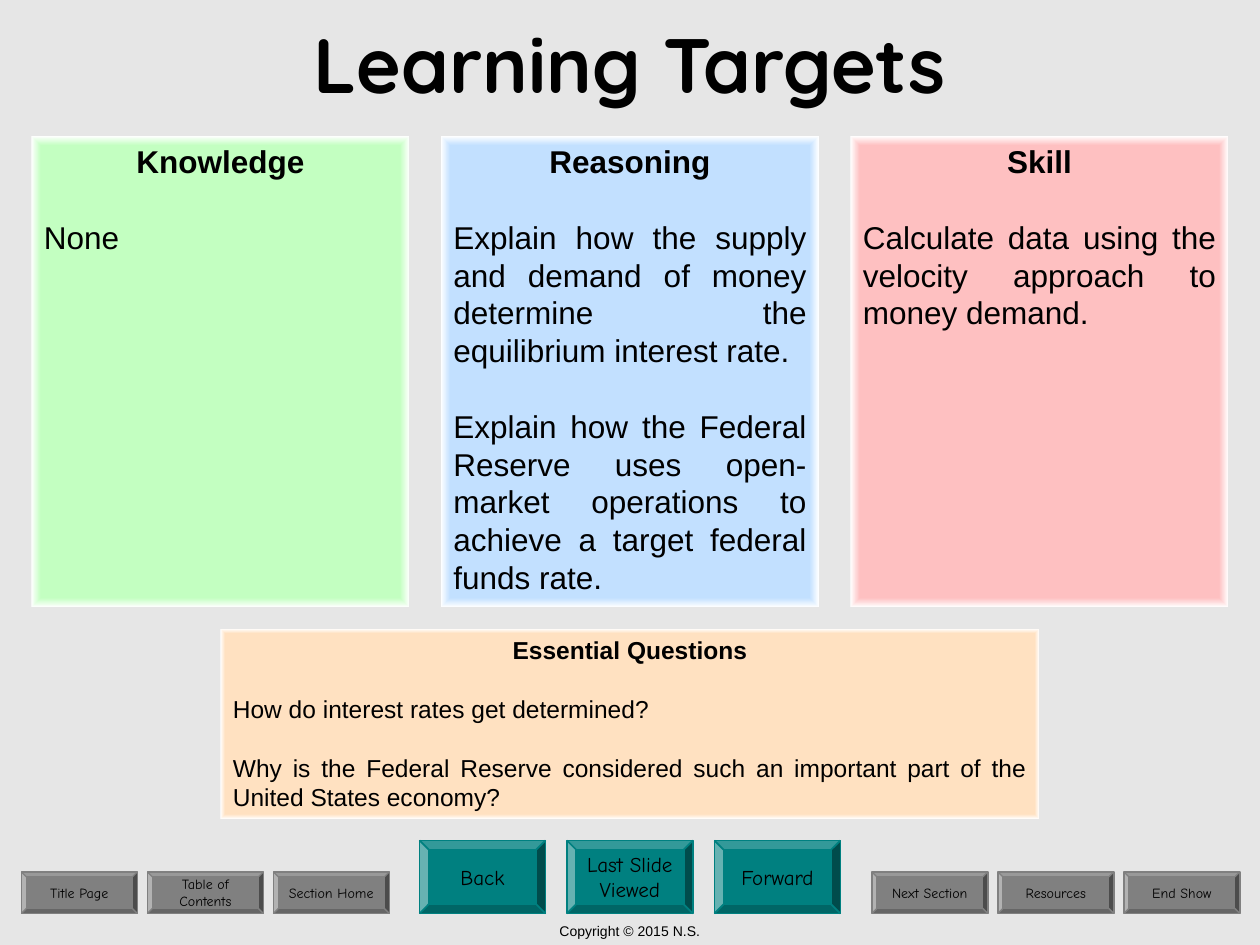
"""Build the Learning Targets slide with target cards and navigation buttons."""
from pptx import Presentation
from pptx.dml.color import RGBColor
from pptx.enum.shapes import MSO_SHAPE
from pptx.enum.text import MSO_ANCHOR, PP_ALIGN
from pptx.oxml import parse_xml
from pptx.oxml.ns import nsdecls, qn
from pptx.util import Inches, Pt

BLACK = RGBColor(0x00, 0x00, 0x00)
PAGE = RGBColor(0xE6, 0xE6, 0xE6)
TEAL = RGBColor(0x00, 0x80, 0x80)
GRAY = RGBColor(0x80, 0x80, 0x80)
GREEN = RGBColor(0xC3, 0xFF, 0xC1)
BLUE = RGBColor(0xC2, 0xE0, 0xFF)
PINK = RGBColor(0xFE, 0xC0, 0xC1)
PEACH = RGBColor(0xFF, 0xE1, 0xC1)
WHITE = RGBColor(0xFF, 0xFF, 0xFF)

TARGETS = [
    ("Knowledge", ["None"], GREEN),
    ("Reasoning", [
        "Explain how the supply and demand of money determine the equilibrium interest rate.",
        "Explain how the Federal Reserve uses open-market operations to achieve a target federal funds rate.",
    ], BLUE),
    ("Skill", ["Calculate data using the velocity approach to money demand."], PINK),
]
QUESTIONS = ("Essential Questions", [
    "How do interest rates get determined?",
    "Why is the Federal Reserve considered such an important part of the United States economy?",
], PEACH)
MAIN_BUTTONS = [["Back"], ["Last Slide", "Viewed"], ["Forward"]]
LEFT_BUTTONS = [["Title Page"], ["Table of", "Contents"], ["Section Home"]]
RIGHT_BUTTONS = [["Next Section"], ["Resources"], ["End Show"]]

TITLE_FONT = {"name": "Quicksand", "size": Pt(44), "bold": True}
COPYRIGHT_FONT = {"name": "Arial", "size": Pt(8)}
MAIN_STYLE = {"size": (1, 0.58), "color": TEAL, "line": 1, "font": 12}
SMALL_STYLE = {"size": (0.92, 0.33), "color": GRAY, "line": 0.75, "font": 8}


def add_paragraph(tf, text, font, align=PP_ALIGN.CENTER, before=0):
    p = tf.paragraphs[0] if not tf.text else tf.add_paragraph()
    p.alignment = align
    p.space_before = Pt(before)
    r = p.add_run()
    r.text = text
    for key, value in font.items():
        setattr(r.font, key, value)
    r.font.color.rgb = BLACK


def add_text(slide, box, text, font, anchor):
    tf = slide.shapes.add_textbox(*map(Inches, box)).text_frame
    tf.word_wrap = True
    tf.vertical_anchor = anchor
    add_paragraph(tf, text, font)


def add_glow_fill(sp, color):
    sp.fill.gradient()
    old = sp._element.spPr.find(qn("a:gradFill"))
    stops = "".join(
        f'<a:gs pos="{pos}"><a:srgbClr val="{c}"/></a:gs>'
        for pos, c in ((95000, color), (100000, WHITE)))
    new = parse_xml(
        f'<a:gradFill {nsdecls("a")} rotWithShape="1"><a:gsLst>{stops}</a:gsLst>'
        '<a:path path="shape"><a:fillToRect l="50000" t="50000" r="50000" b="50000"/>'
        '</a:path></a:gradFill>')
    old.getparent().replace(old, new)


def add_card(slide, box, card, size):
    heading, items, color = card
    sp = slide.shapes.add_shape(MSO_SHAPE.RECTANGLE, *map(Inches, box))
    sp.shadow.inherit = False
    add_glow_fill(sp, color)
    sp.line.fill.background()
    tf = sp.text_frame
    tf.word_wrap = True
    tf.vertical_anchor = MSO_ANCHOR.TOP
    font = {"name": "Arial", "size": Pt(size), "bold": True}
    add_paragraph(tf, heading, font)
    for item in items:
        add_paragraph(tf, item, font | {"bold": False}, PP_ALIGN.JUSTIFY, 1.2 * size)


def add_buttons(slide, labels, left, top, pitch, style):
    for i, lines in enumerate(labels):
        box = (left + i * pitch, top, *style["size"])
        sp = slide.shapes.add_shape(MSO_SHAPE.BEVEL, *map(Inches, box))
        sp.shadow.inherit = False
        sp.fill.solid()
        sp.fill.fore_color.rgb = style["color"]
        sp.line.color.rgb = style["color"]
        sp.line.width = Pt(style["line"])
        tf = sp.text_frame
        tf.word_wrap = False
        tf.vertical_anchor = MSO_ANCHOR.MIDDLE
        for line in lines:
            add_paragraph(tf, line, {"name": "Comic Neue", "size": Pt(style["font"])})


def main():
    prs = Presentation()
    prs.slide_width, prs.slide_height = Inches(10), Inches(7.5)
    s = prs.slides.add_slide(prs.slide_layouts[6])
    s.background.fill.solid()
    s.background.fill.fore_color.rgb = PAGE

    add_text(s, (0, 7.27, 10, 0.23), "Copyright © 2015 N.S.", COPYRIGHT_FONT, MSO_ANCHOR.TOP)
    add_buttons(s, MAIN_BUTTONS, 3.33, 6.67, 1.17, MAIN_STYLE)
    add_buttons(s, LEFT_BUTTONS, 0.17, 6.92, 1, SMALL_STYLE)
    add_buttons(s, RIGHT_BUTTONS, 6.92, 6.92, 1, SMALL_STYLE)
    add_text(s, (0, 0, 10, 1), "Learning Targets", TITLE_FONT, MSO_ANCHOR.MIDDLE)
    for i, target in enumerate(TARGETS):
        add_card(s, (0.25 + i * 3.25, 1.08, 3, 3.74), target, 18)
    add_card(s, (1.75, 4.99, 6.5, 1.51), QUESTIONS, 14)
    prs.save("out.pptx")


if __name__ == "__main__":
    main()
